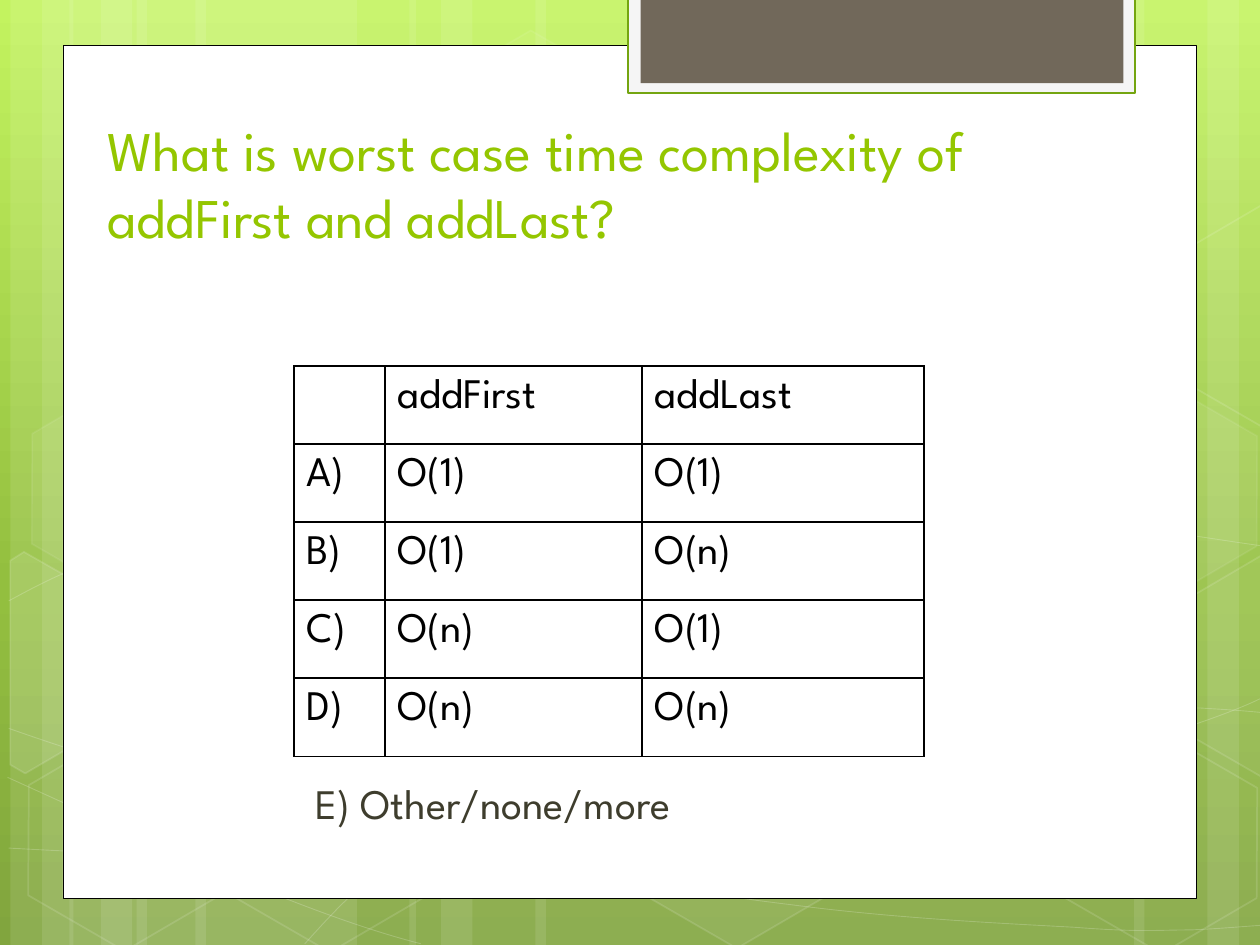
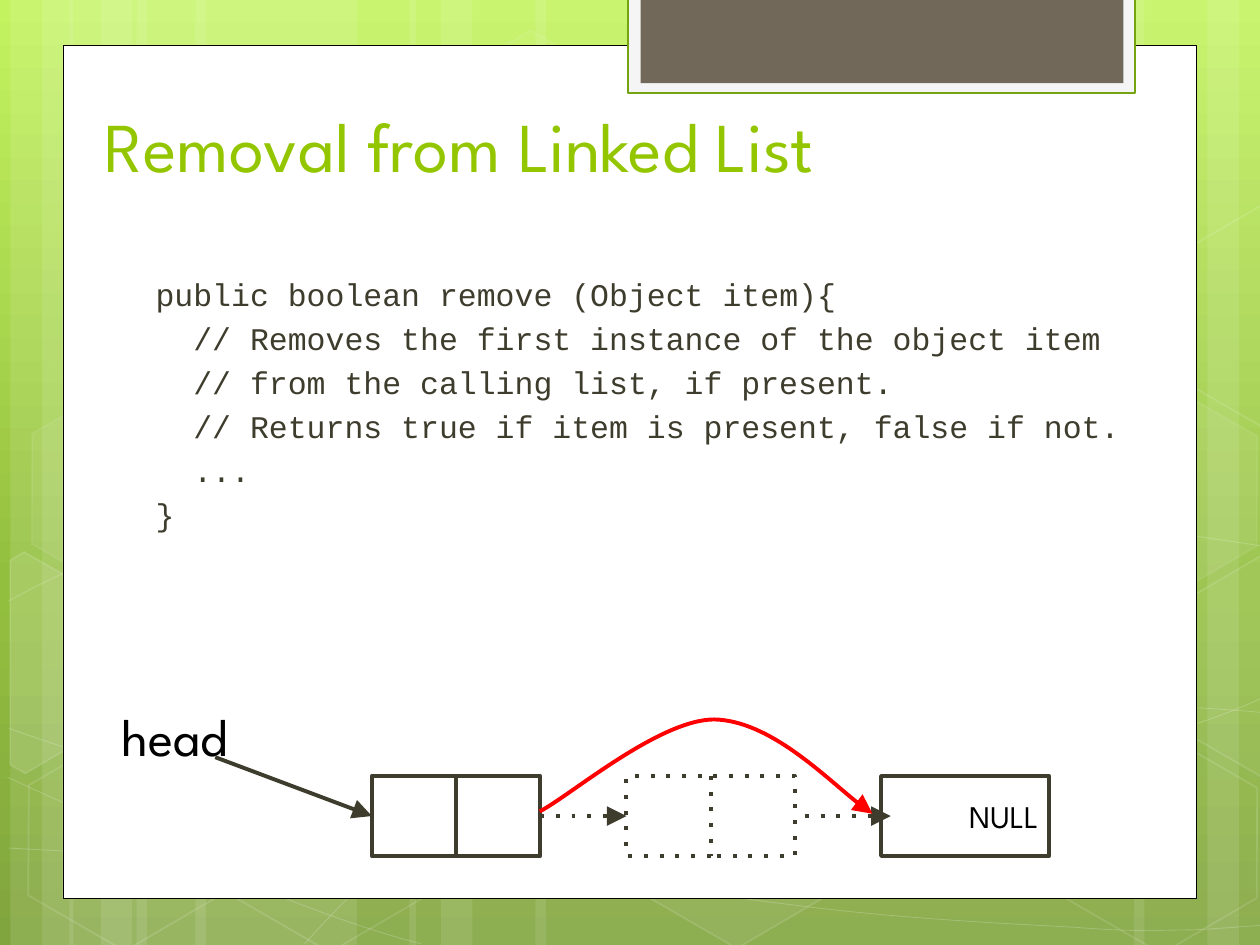
"""Build two slides on linked lists: a time complexity question and removal."""
from copy import deepcopy

from lxml.etree import SubElement
from pptx import Presentation
from pptx.dml.color import RGBColor
from pptx.enum.shapes import MSO_CONNECTOR as CONN, MSO_SHAPE as SHAPE
from pptx.enum.text import MSO_ANCHOR as ANCHOR
from pptx.oxml.ns import qn
from pptx.util import Pt

FONT, CODE_FONT = "League Spartan", "Courier New"
GREEN, INK, BLACK, WHITE, RED = "94C600", "3E3D2D", "000000", "FFFFFF", "FF0000"
GRADIENT = [(0, "C3F35F"), (0.62, "93BF3F"), (1, "81A53E")]
INSET = 7.2

BARS = [(78, 126), (6, 36), (24, 60), (111.6, 126), (39.6, 36), (57.6, 60),
        (528, 126), (690, 36), (648, 60), (306, 222), (234, 36), (252, 60)]
CURVES = [
    [(5, 484.6), (44, 486.7), (82.8, 488.9), (136.8, 488.2),
     (190.8, 487.4), (257.8, 486), (329.8, 478.8),
     (401.8, 471.6), (504, 457.9), (570.2, 444.2),
     (635.8, 430.6), (703.4, 409), (725, 396.7)],
    [(5, 343.4), (26, 332), (46.8, 321), (87.1, 310.3),
     (128.2, 299.5), (186.5, 283.7), (249.8, 278.6),
     (314, 273.6), (391.7, 272.9), (470.9, 278.6),
     (550, 284.4), (681.8, 306.7), (725, 312.5)],
    [(4.3, 444.2), (91.4, 483.8), (177.8, 523.4), (240.5, 539.3)],
    [(5, 416.2), (27.4, 424), (50.4, 432), (92.2, 443.5),
     (134, 454.3), (196.6, 472.3), (257, 484.6),
     (316.8, 496.8), (392.4, 509.8), (452.2, 517),
     (512, 524.9), (576, 527.8), (614.2, 529.9),
     (651.6, 532.8), (661.7, 531.4), (680.4, 531.4),
     (699.1, 530.6), (712, 529.2), (725, 528.5)],
    [(174.2, 539.3), (187.2, 524.9), (200.2, 510.5), (217.4, 497.5),
     (234.7, 484.6), (259.2, 470.2), (279.4, 460.1),
     (299.5, 450), (311.8, 445.7), (338.4, 438.5),
     (364.3, 431.3), (412.6, 421.2), (437.8, 416.2),
     (463.7, 411.1), (467.3, 411.1), (489.6, 409.7),
     (511.9, 407.5), (547.2, 405.4), (571.7, 404.6),
     (596.9, 403.9), (637.9, 404.6), (637.9, 404.6),
     (654, 404.6), (670, 404.6), (686.2, 404.6),
     (699.1, 405.4), (711.4, 406.1), (724.3, 407.5)],
]
HEXAGONS = [(240.5, 26, 4, 8), (357.8, 424, 6, 12), (8, 425.5, 0, 12),
            (10, 224.6, 7, 8), (125.3, 426.2, 0, 12), (600.5, 427, 0, 12),
            (600.5, 226, 7, 8)]
CUT_HEXAGONS = [
    ([(5.8, 320.4), (13.7, 315.4), (69.1, 347), (68.4, 410.4),
      (14.4, 442), (5.8, 437)], 10),
    ([(666.7, 349.2), (720.7, 317.5), (726.5, 321.1), (726.5, 441.4),
      (721.4, 444.2), (666.7, 412.6)], 4),
    ([(666.7, 149), (720.7, 117.4), (727.2, 121), (726.5, 241.2),
      (721.4, 244), (666.7, 212.4)], 0),
]

QUESTION = "What is worst case time complexity of addFirst and addLast?"
ANSWERS = [("", "addFirst", "addLast"), ("A)", "O(1)", "O(1)"), ("B)", "O(1)", "O(n)"),
           ("C)", "O(n)", "O(1)"), ("D)", "O(n)", "O(n)")]
COLUMNS, ROW_HEIGHT = (52, 147, 161), 44.6
LAST_ANSWER = "E) Other/none/more"

REMOVAL = "Removal from Linked List"
CODE = [(0, "public boolean remove (Object item){"),
        (1, "// Removes the first instance of the object item"),
        (1, "// from the calling list, if present."),
        (1, "// Returns true if item is present, false if not."),
        (1, "..."),
        (0, "}")]
NODE_X, NODE_Y, NODE_W, NODE_H, NODE_STEP = 212.5, 443.5, 96.2, 45.6, 145.5
BYPASS = [(308.4, 463.7), (325.4, 455), (376.6, 411.1), (408.2, 411.1),
          (440, 411.8), (483.8, 455.8), (498.6, 465)]


def rgb(color):
    return RGBColor.from_string(color)


def pts(*values):
    return [Pt(v) for v in values]


def paint(fill, color, alpha=100):
    if not color or not alpha:
        fill.background()
        return
    fill.solid()
    fill.fore_color.rgb = rgb(color)
    if alpha < 100:
        srgb = fill._xPr.find(qn("a:solidFill"))[0]
        SubElement(srgb, qn("a:alpha"), val=str(alpha * 1000))


def stroke(line, color, width, alpha=100, dotted=False, arrow=False):
    paint(line.fill, color, alpha)
    if not color:
        return
    line.width = Pt(width)
    ln = line.fill._xPr
    if dotted:
        SubElement(ln, qn("a:prstDash"), val="dot")
    if arrow:
        SubElement(ln, qn("a:tailEnd"), type="triangle", w="lg", len="lg")


def add_box(slide, at, fill=None, alpha=100, line=None, width=1, line_alpha=100,
            dotted=False, kind=SHAPE.RECTANGLE):
    sp = slide.shapes.add_shape(kind, *pts(*at))
    sp.shadow.inherit = False
    paint(sp.fill, fill, alpha)
    stroke(sp.line, line, width, line_alpha, dotted)
    return sp


def add_outline(slide, points, closed=False, fill_alpha=0, **line):
    start, *rest = [pts(*point) for point in points]
    fb = slide.shapes.build_freeform(*start, scale=1.0)
    fb.add_line_segments(rest, close=closed)
    sp = fb.convert_to_shape()
    sp.shadow.inherit = False
    paint(sp.fill, WHITE, fill_alpha)
    stroke(sp.line, **line)
    return sp


def add_curve(slide, points, **line):
    sp = add_outline(slide, points, **line)
    path = sp._element.find(".//" + qn("a:path"))
    segments = path.findall(qn("a:lnTo"))
    for i in range(0, len(segments), 3):
        curve = SubElement(path, qn("a:cubicBezTo"))
        for segment in segments[i:i + 3]:
            curve.append(segment[0])
            path.remove(segment)


def add_line(slide, start=(0, 0), end=(0, 0), begin=None, finish=None, **line):
    cx = slide.shapes.add_connector(CONN.STRAIGHT, *pts(*start, *end))
    if begin:
        cx.begin_connect(*begin)
    if finish:
        cx.end_connect(*finish)
    stroke(cx.line, INK, 2.25, **line)
    SubElement(cx._element.spPr, qn("a:effectLst"))


def set_font(p, size, color, name=FONT):
    p.font.size, p.font.name = Pt(size), name
    p.font.color.rgb = rgb(color)


def add_text(slide, at, lines, size, color, name=FONT, anchor=ANCHOR.TOP,
             inset=INSET, spaced=False):
    tf = slide.shapes.add_textbox(*pts(*at)).text_frame
    tf.word_wrap, tf.vertical_anchor = True, anchor
    tf.margin_left = tf.margin_right = Pt(INSET)
    tf.margin_top = tf.margin_bottom = Pt(inset)
    for i, (indent, text) in enumerate(lines):
        p = tf.add_paragraph() if i else tf.paragraphs[0]
        p.text = text
        pPr = p._p.get_or_add_pPr()
        pPr.set("marL", str(Pt(indent)))
        if spaced:
            SubElement(SubElement(pPr, qn("a:spcBef")), qn("a:spcPct"), val="20000")
        set_font(p, size, color, name)


def add_background(slide):
    fill = slide.background.fill
    fill.gradient()
    fill.gradient_angle = 270
    stops = slide.element.find(".//" + qn("a:gsLst"))
    stops.append(deepcopy(stops[0]))
    for stop, (position, color) in zip(fill.gradient_stops, GRADIENT):
        stop.position, stop.color.rgb = position, rgb(color)
    for x, width in BARS:
        add_box(slide, (x, 0, width, 540), WHITE, 10)
    for curve in CURVES:
        add_curve(slide, curve, color=WHITE, width=0.5, alpha=20)
    for x, y, alpha, line_alpha in HEXAGONS:
        sp = add_box(slide, (x, y, 126, 109.4), WHITE, alpha, WHITE, 1, line_alpha,
                     kind=SHAPE.HEXAGON)
        sp.adjustments[0], sp.rotation = 0.285, 30
    for points, fill_alpha in CUT_HEXAGONS:
        add_outline(slide, points, True, fill_alpha, color=WHITE, width=1, alpha=12)
    add_box(slide, (36, 26, 648, 487.2), WHITE, line=BLACK, width=0.5)
    add_box(slide, (359, -1.5, 289.5, 54.5), "F5F5F5", line="74A510", width=1.25)
    add_box(slide, (366, -1.5, 276, 49), "71685A")


def add_slide(prs, title, at, size):
    slide = prs.slides.add_slide(prs.slide_layouts[6])
    add_background(slide)
    add_text(slide, at, [(0, title)], size, GREEN, anchor=ANCHOR.BOTTOM)
    return slide


def add_answers(slide):
    table = slide.shapes.add_table(len(ANSWERS), len(COLUMNS), *pts(
        168, 209.2, sum(COLUMNS), ROW_HEIGHT * len(ANSWERS))).table
    table.first_row = table.horz_banding = False
    for column, width in zip(table.columns, COLUMNS):
        column.width = Pt(width)
    for row, texts in zip(table.rows, ANSWERS):
        row.height = Pt(ROW_HEIGHT)
        for cell, text in zip(row.cells, texts):
            cell.text = text
            cell.margin_left = cell.margin_right = Pt(INSET)
            cell.margin_top = cell.margin_bottom = Pt(INSET)
            set_font(cell.text_frame.paragraphs[0], 24, BLACK)
            tcPr = cell._tc.get_or_add_tcPr()
            for side in ("lnL", "lnR", "lnT", "lnB"):
                ln = SubElement(tcPr, qn("a:" + side), w=str(Pt(1)))
                SubElement(SubElement(ln, qn("a:solidFill")), qn("a:srgbClr"), val=BLACK)
            cell.fill.background()


def add_list_diagram(slide):
    nodes = [add_box(slide, (NODE_X + i * NODE_STEP, NODE_Y, NODE_W, NODE_H),
                     line=INK, width=2.25, dotted=i == 1) for i in range(3)]
    first, removed, _ = nodes
    middle = NODE_Y + NODE_H / 2
    add_text(slide, (546.7, 448.5, 120, 36), [(0, "NULL")], 18, BLACK)
    add_text(slide, (62.3, 395.3, 120, 36), [(0, "head")], 30, BLACK)
    add_line(slide, start=(123, 432.7), finish=(first, 1), arrow=True)
    add_line(slide, begin=(first, 3), finish=(removed, 1), dotted=True, arrow=True)
    add_line(slide, (460, middle), (509, middle), dotted=True, arrow=True)
    for node in (first, removed):
        add_line(slide, begin=(node, 0), finish=(node, 2), dotted=node is removed)
    add_curve(slide, BYPASS, color=RED, width=2.25, arrow=True)


def main():
    prs = Presentation()
    prs.slide_width, prs.slide_height = pts(720, 540)
    slide = add_slide(prs, QUESTION, (54.3, 60, 590, 90), 32)
    add_text(slide, (168.3, 440.6, 354, 51), [(5, LAST_ANSWER)], 24, INK,
             inset=3.6, spaced=True)
    add_answers(slide)
    slide = add_slide(prs, REMOVAL, (52.9, 23.8, 553, 90), 40)
    code = [(5.5 + 21.6 * level, text) for level, text in CODE]
    add_text(slide, (76.3, 149.8, 584, 192), code, 18, INK, CODE_FONT, spaced=True)
    add_list_diagram(slide)
    prs.save("out.pptx")


if __name__ == "__main__":
    main()
